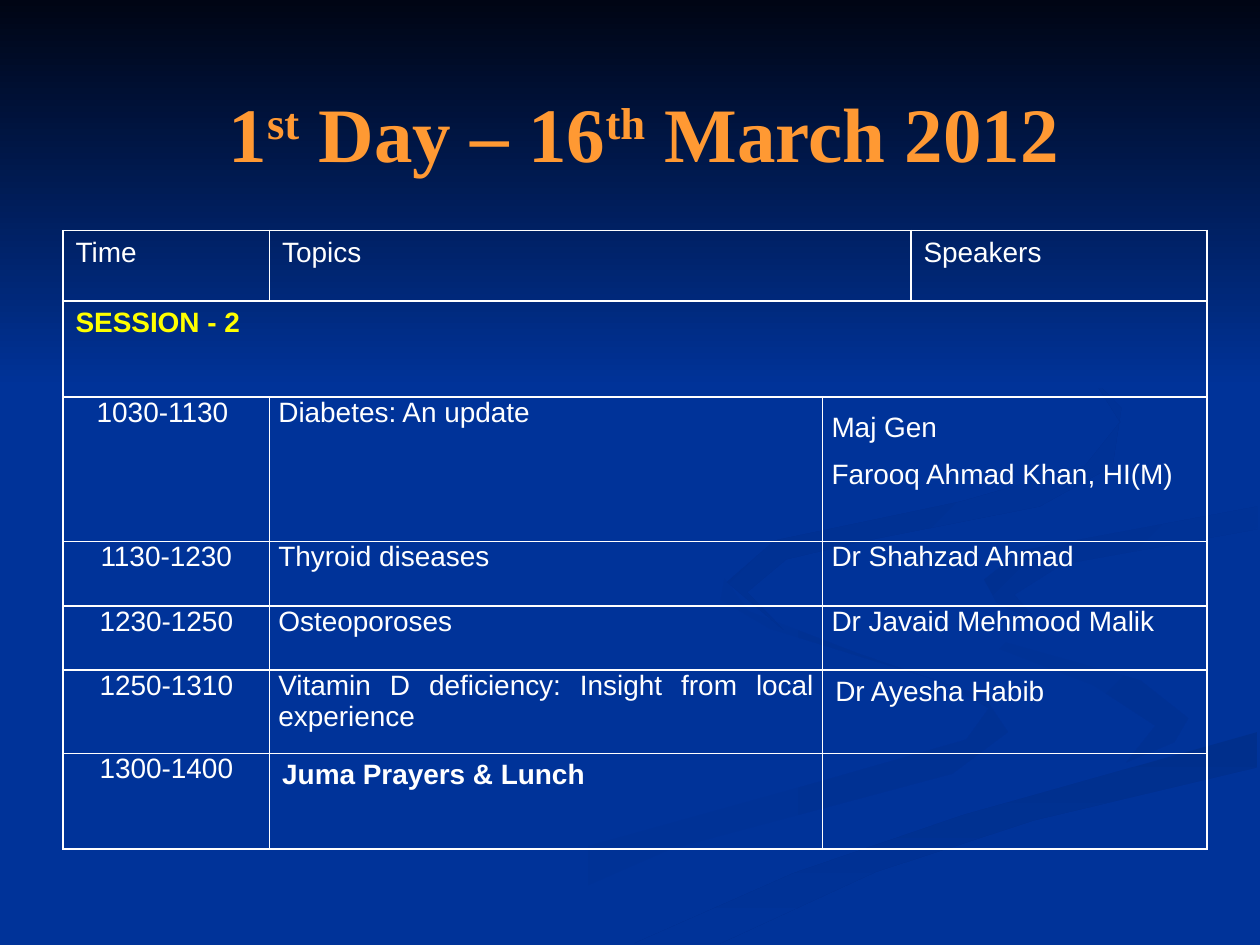
from lxml import etree
from pptx import Presentation
from pptx.dml.color import RGBColor
from pptx.enum.text import MSO_ANCHOR, PP_ALIGN
from pptx.oxml.ns import qn
from pptx.util import Inches, Pt

LEFT, CENTER, JUSTIFY = PP_ALIGN.LEFT, PP_ALIGN.CENTER, PP_ALIGN.JUSTIFY
MIDDLE = MSO_ANCHOR.MIDDLE
NAVY, WHITE, ORANGE, YELLOW = "003399", "FFFFFF", "FF9933", "FFFF00"


def color(value):
    return RGBColor.from_string(value)


def add_border(cell):
    """Draw a thin white line on each side of a table cell."""
    properties = cell._tc.get_or_add_tcPr()
    for position, side in enumerate(("a:lnL", "a:lnR", "a:lnT", "a:lnB")):
        line = etree.Element(qn(side), w=str(Pt(1)))
        fill = etree.SubElement(line, qn("a:solidFill"))
        etree.SubElement(fill, qn("a:srgbClr"), val=WHITE)
        properties.insert(position, line)


deck = Presentation()
deck.slide_width, deck.slide_height = Inches(10), Inches(7.5)
page = deck.slides.add_slide(deck.slide_layouts[5])
page.background.fill.solid()
page.background.fill.fore_color.rgb = color(NAVY)

# Background: start color, end color, clockwise angle,
# outline points in hundredths of an inch
ribbons = [
    (NAVY, "003193", 0, [
        (781, 553), (682, 519), (594, 485), (575, 459), (572, 476), (611, 499),
        (741, 539), (785, 562), (767, 587), (652, 620), (458, 674), (300, 749),
        (361, 749), (532, 674), (756, 614), (800, 581)]),
    (NAVY, "003193", 45, [
        (943, 570), (905, 540), (774, 503), (724, 464), (739, 494), (868, 544),
        (917, 576), (894, 605), (932, 589)]),
    ("002F8C", NAVY, 90, [
        (503, 749), (571, 749), (695, 692), (821, 651), (998, 609), (998, 581),
        (764, 647), (630, 693)]),
    ("003091", NAVY, 45, [
        (781, 460), (791, 478), (826, 496), (805, 472), (843, 448), (998, 420),
        (998, 402), (810, 437)]),
    ("002F8E", NAVY, 45, [
        (683, 430), (825, 402), (883, 370), (890, 324), (843, 275), (762, 233),
        (862, 292), (889, 335), (861, 370), (763, 398), (615, 429), (577, 462),
        (622, 500), (593, 470), (624, 444)]),
    ("000514", NAVY, 90, [(0, 0), (0, 308), (1000, 308), (1000, 0)]),
]
for start_color, end_color, angle, points in ribbons:
    builder = page.shapes.build_freeform(*points[0], scale=Inches(0.01))
    builder.add_line_segments(points[1:], close=True)
    ribbon = builder.convert_to_shape()
    ribbon.shadow.inherit = False
    ribbon.line.fill.background()
    ribbon.fill.gradient()
    ribbon.fill.gradient_angle = (360 - angle) % 360
    for stop, value in zip(ribbon.fill.gradient_stops, (start_color, end_color)):
        stop.color.rgb = color(value)

# Title, brought in front of the background
title = page.shapes.title
title.element.getparent().append(title.element)
title.left, title.top = Inches(1.07), Inches(0.42)
title.width, title.height = Inches(8.08), Inches(1.25)
title.text_frame.vertical_anchor = MIDDLE
para = title.text_frame.paragraphs[0]
para.alignment = CENTER
for text in ("1", "st", " Day – 16", "th", " March 2012"):
    span = para.add_run()
    span.text = text
    if text in ("st", "th"):
        span._r.get_or_add_rPr().set("baseline", "30000")
para.font.name, para.font.size, para.font.bold = "Times New Roman", Pt(44), True
para.font.color.rgb = color(ORANGE)

# Programme: one row per line, None where a cell is empty or merged away
programme = [
    ("Time", "Topics", None, "Speakers"),
    ("SESSION - 2", None, None, None),
    ("1030-1130 ", "Diabetes: An update", "Maj Gen \nFarooq Ahmad Khan, HI(M)", None),
    ("1130-1230", "Thyroid diseases", "Dr Shahzad Ahmad", None),
    ("1230-1250", "Osteoporoses", "Dr Javaid Mehmood Malik", None),
    ("1250-1310", "Vitamin D deficiency: Insight from local experience",
     "Dr Ayesha Habib", None),
    ("1300-1400", "Juma Prayers & Lunch", None, None),
]
roomy_texts = ("Dr Ayesha Habib", "Juma Prayers & Lunch")
bold_texts = ("SESSION - 2", "Juma Prayers & Lunch")
justified_starts = ("Diabetes", "Maj Gen", "Vitamin D")
column_widths = [1.64, 4.39, 0.7, 2.35]
row_heights = [0.56, 0.76, 1.15, 0.51, 0.51, 0.66, 0.76]

frame = page.shapes.add_table(len(row_heights), len(column_widths), Inches(0.5),
                              Inches(1.83), Inches(9.08), Inches(4.92))
table = frame.table
table.first_row = table.horz_banding = False
for column, width in zip(table.columns, column_widths):
    column.width = Inches(width)
for row, height in zip(table.rows, row_heights):
    row.height = Inches(height)
for cell in table.iter_cells():
    cell.fill.background()
    add_border(cell)

table.cell(0, 1).merge(table.cell(0, 2))
table.cell(1, 0).merge(table.cell(1, 3))
for row in range(2, len(programme)):
    table.cell(row, 2).merge(table.cell(row, 3))

for row, texts in enumerate(programme):
    for column, text in enumerate(texts):
        if text is None:
            continue
        cell = table.cell(row, column)
        cell.text = text
        tight = row > 1 and text not in roomy_texts
        if tight:
            cell.margin_left = cell.margin_right = Inches(0.07)
            cell.margin_top = cell.margin_bottom = 0
        alignment = CENTER if tight and column == 0 else LEFT
        if text.startswith(justified_starts):
            alignment = JUSTIFY
        for para in cell.text_frame.paragraphs:
            para.alignment = alignment
            if tight and alignment != JUSTIFY:
                para.space_after = Pt(10)
            if "\n" in text:
                para.line_spacing = 1.5
            para.font.name, para.font.size = "Arial", Pt(16)
            para.font.bold = text in bold_texts
            para.font.color.rgb = color(YELLOW if row == 1 else WHITE)

deck.save("out.pptx")
